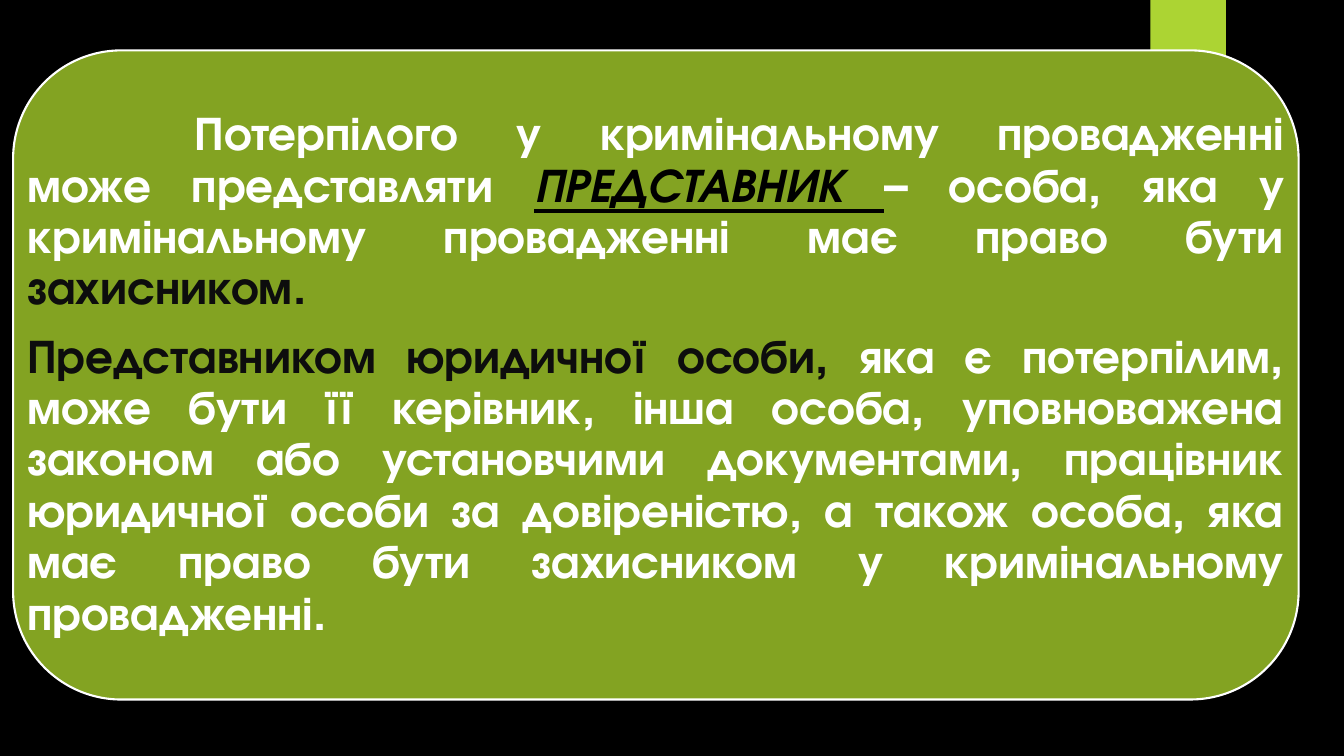
"""Slide on who may represent a victim in criminal proceedings."""
from pptx import Presentation
from pptx.dml.color import RGBColor
from pptx.enum.shapes import MSO_SHAPE
from pptx.enum.text import MSO_ANCHOR, PP_ALIGN
from pptx.util import Inches, Pt

COLOURS = {
    "background": "000000",
    "ribbon": "ACD433",
    "panel": "83A322",
    "light": "FFFFFF",
    "dark": "0D0D0D",
    "term": "000000",
}


def add_run(paragraph, text, colour="light", size=34, italic=False, underline=False):
    run = paragraph.add_run()
    run.text = text
    run.font.name = "TeX Gyre Adventor"
    run.font.size = Pt(size)
    run.font.bold = True
    run.font.italic = italic
    run.font.underline = underline
    run.font.color.rgb = RGBColor.from_string(COLOURS[colour])


presentation = Presentation()
presentation.slide_width = Inches(13.33)
presentation.slide_height = Inches(7.5)
slide = presentation.slides.add_slide(presentation.slide_layouts[6])
slide.background.fill.solid()
slide.background.fill.fore_color.rgb = RGBColor.from_string(COLOURS["background"])

ribbon = slide.shapes.add_shape(
    MSO_SHAPE.RECTANGLE, Inches(11.41), 0, Inches(0.75), Inches(1.25))
ribbon.line.fill.background()

panel_area = [Inches(value) for value in (0.13, 0.5, 12.75, 6.44)]
panel = slide.shapes.add_shape(MSO_SHAPE.ROUNDED_RECTANGLE, *panel_area)
panel.line.color.rgb = RGBColor.from_string(COLOURS["light"])
panel.line.width = Pt(1.5)

for part, colour in ((ribbon, "ribbon"), (panel, "panel")):
    part.shadow.inherit = False
    part.fill.solid()
    part.fill.fore_color.rgb = RGBColor.from_string(COLOURS[colour])

definition = slide.shapes.add_textbox(*panel_area).text_frame
definition.word_wrap = True
definition.vertical_anchor = MSO_ANCHOR.MIDDLE
definition.margin_left = definition.margin_right = Inches(0.14)
definition.margin_top = definition.margin_bottom = Inches(0.14)

victim = definition.paragraphs[0]
legal_entity = definition.add_paragraph()
for paragraph in (victim, legal_entity):
    paragraph.alignment = PP_ALIGN.JUSTIFY
    paragraph.line_spacing = 0.9
    paragraph.space_after = Pt(12)
victim._p.get_or_add_pPr().set("indent", str(Inches(1.66)))

add_run(victim, "Потерпілого у кримінальному провадженні може представляти ")
add_run(victim, "ПРЕДСТАВНИК", colour="term", italic=True, underline=True)
add_run(victim, " ", colour="term", underline=True)
add_run(victim, "– особа, яка у кримінальному провадженні має право бути ")
add_run(victim, "захисником.", colour="dark")

add_run(legal_entity, "Представником юридичної особи,", colour="dark")
add_run(legal_entity, " яка є потерпілим, може бути її керівник, інша особа, "
        "уповноважена законом або установчими документами, працівник "
        "юридичної особи за довіреністю, а також особа, яка має право бути "
        "захисником у кримінальному провадженні.")

presentation.save("out.pptx")
